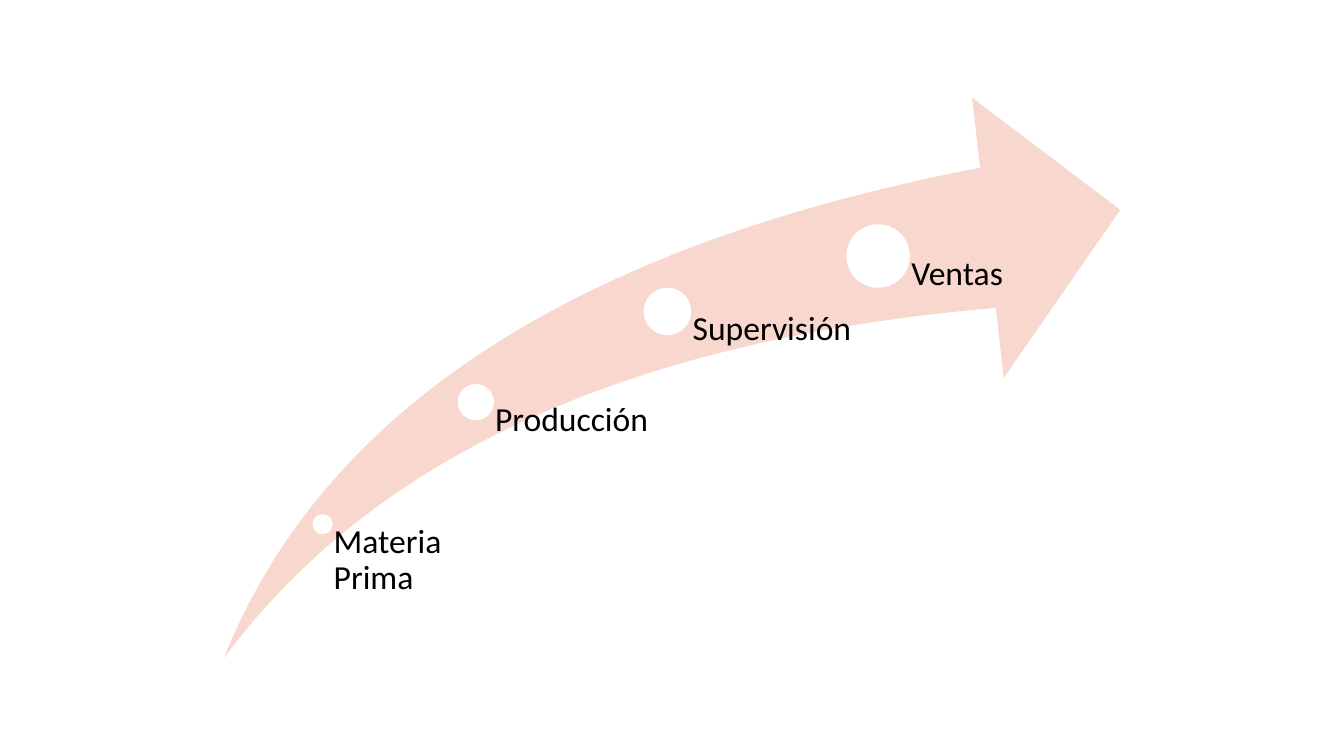
"""Build a slide with four production stages along a rising arrow."""
import pptx
import pptx.dml.color
import pptx.enum.shapes
import pptx.enum.text
import pptx.util

SHAPE = pptx.enum.shapes.MSO_SHAPE
BASE = 653
STAGES = [
    ("Materia Prima", 320, 520, 20, 152),
    ("Producción", 472, 399, 36, 187),
    ("Supervisión", 662, 309, 47, 187),
    ("Ventas", 871, 254, 63, 187),
]


def px(count):
    return pptx.util.Emu(round(count * 9144))


def color(code):
    return pptx.dml.color.RGBColor.from_string(code)


class Chart:
    font = "Calibri"
    size = 24
    ink = "000000"
    arrow = "F8D7CE"
    dot = "FFFFFF"

    def __init__(self, slide):
        self.group = slide.shapes.add_group_shape()

    def shape(self, kind, left, top, width, height, fill):
        item = self.group.shapes.add_shape(
            kind, px(left), px(top), px(width), px(height))
        item.shadow.inherit = False
        item.fill.solid()
        item.fill.fore_color.rgb = color(fill)
        item.line.fill.background()
        return item

    def swoosh(self, left, top, width, height):
        item = self.shape(SHAPE.SWOOSH_ARROW, left, top, width, height, self.arrow)
        item.adjustments[0] = 0.25
        item.adjustments[1] = 0.25

    def circle(self, x, y, size):
        self.shape(SHAPE.OVAL, x - size / 2, y - size / 2, size, size, self.dot)

    def label(self, text, left, top, width, height, inset):
        box = self.group.shapes.add_textbox(
            px(left), px(top), px(width), px(height))
        frame = box.text_frame
        frame.word_wrap = True
        frame.vertical_anchor = pptx.enum.text.MSO_ANCHOR.TOP
        frame.margin_left = px(inset)
        frame.margin_top = frame.margin_right = frame.margin_bottom = 0
        line = frame.paragraphs[0]
        line.line_spacing = 0.9
        run = line.add_run()
        run.text = text
        run.font.name = self.font
        run.font.size = pptx.util.Pt(self.size)
        run.font.color.rgb = color(self.ink)


def main():
    deck = pptx.Presentation()
    deck.slide_width = px(1333)
    deck.slide_height = px(750)
    chart = Chart(deck.slides.add_slide(deck.slide_layouts[6]))
    chart.swoosh(222, 97, 889, 556)
    for name, x, y, size, width in STAGES:
        chart.circle(x, y, size)
        chart.label(name, x, y, width, BASE - y, round(size * 0.53))
    deck.save("out.pptx")


if __name__ == "__main__":
    main()
